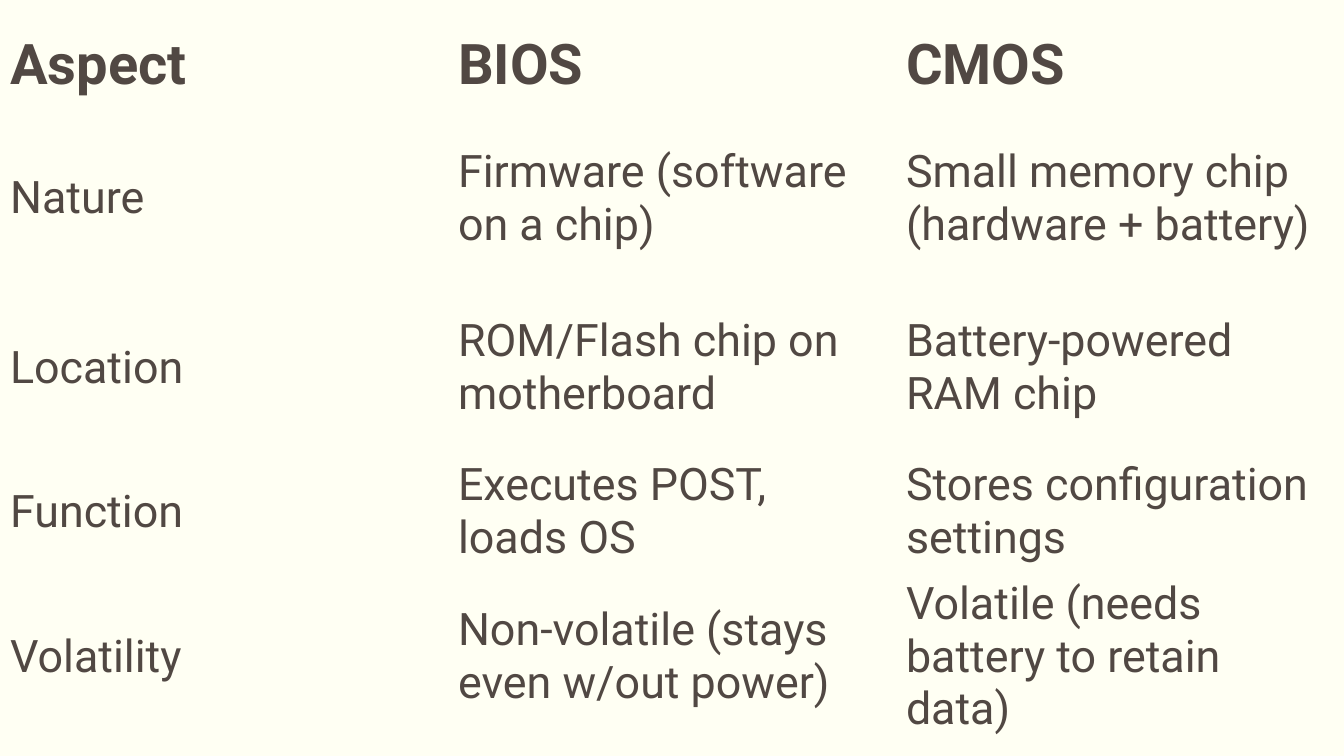
from dataclasses import dataclass

from pptx import Presentation
from pptx.dml.color import RGBColor
from pptx.enum.text import MSO_ANCHOR as Anchor
from pptx.oxml.ns import qn
from pptx.util import Pt


@dataclass(frozen=True)
class Theme:
    background: RGBColor = RGBColor(0xFF, 0xFF, 0xF3)
    ink: RGBColor = RGBColor(0x51, 0x48, 0x43)
    font: str = "Roboto"
    heading_size: int = 40
    body_size: int = 32


THEME = Theme()
SLIDE_WIDTH, SLIDE_HEIGHT = 960, 540
NO_GRID_STYLE = "{2D5ABB26-0587-4C30-8999-92F81FD0307C}"

COMPARISON = [
    ("Aspect", "BIOS", "CMOS"),
    ("Nature", "Firmware (software on a chip)", "Small memory chip (hardware + battery)"),
    ("Location", "ROM/Flash chip on motherboard", "Battery-powered RAM chip"),
    ("Function", "Executes POST, loads OS", "Stores configuration settings"),
    ("Volatility", "Non-volatile (stays even w/out power)",
     "Volatile (needs battery to retain data)"),
]
ROW_HEIGHTS = [69, 121, 121, 84.5, 123]


def write_cell(cell, wording, is_heading):
    cell.fill.background()
    cell.vertical_anchor = Anchor.MIDDLE
    run = cell.text_frame.paragraphs[0].add_run()
    run.text = wording
    run.font.name = THEME.font
    run.font.size = Pt(THEME.heading_size if is_heading else THEME.body_size)
    run.font.bold = is_heading
    run.font.color.rgb = THEME.ink


def add_comparison(slide, left, top, width, row_heights):
    column_count = len(COMPARISON[0])
    frame = slide.shapes.add_table(len(COMPARISON), column_count, Pt(left), Pt(top),
                                   Pt(width), Pt(sum(row_heights)))
    comparison = frame.table

    # Plain table: no bands, no grid
    comparison.first_row = False
    comparison.horz_banding = False
    frame._element.find(".//" + qn("a:tableStyleId")).text = NO_GRID_STYLE

    # Equal columns, rows of their own height
    for column in comparison.columns:
        column.width = Pt(width / column_count)
    for row, height in zip(comparison.rows, row_heights):
        row.height = Pt(height)

    # Headings, then one aspect per row
    for row_index, aspect in enumerate(COMPARISON):
        for column_index, wording in enumerate(aspect):
            write_cell(comparison.cell(row_index, column_index), wording, row_index == 0)


def main():
    deck = Presentation()
    deck.slide_width, deck.slide_height = Pt(SLIDE_WIDTH), Pt(SLIDE_HEIGHT)
    slide = deck.slides.add_slide(deck.slide_layouts[6])
    backdrop = slide.background.fill
    backdrop.solid()
    backdrop.fore_color.rgb = THEME.background
    add_comparison(slide, 0, 12.25, SLIDE_WIDTH, ROW_HEIGHTS)
    deck.save("out.pptx")


if __name__ == "__main__":
    main()
